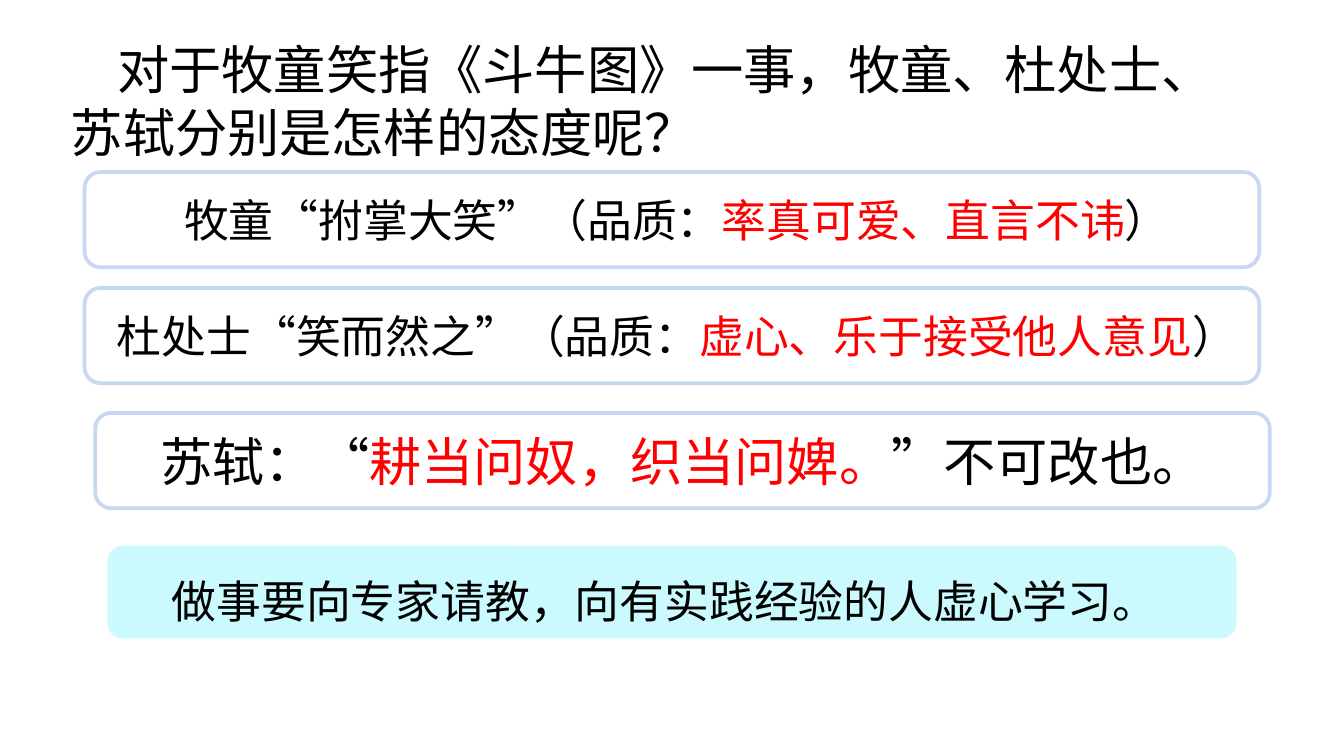
from pptx import Presentation
from pptx.dml.color import RGBColor
from pptx.enum.lang import MSO_LANGUAGE_ID
from pptx.enum.shapes import MSO_SHAPE
from pptx.enum.text import MSO_ANCHOR, PP_ALIGN
from pptx.oxml.ns import qn
from pptx.util import Cm, Pt
from lxml import etree

FONT = "Noto Sans CJK SC"
BLACK = RGBColor(0x00, 0x00, 0x00)
RED = RGBColor(0xFF, 0x00, 0x00)
WHITE = RGBColor(0xFF, 0xFF, 0xFF)
PALE_BLUE = RGBColor(0xC6, 0xD9, 0xF1)
CYAN = RGBColor(0xCA, 0xFA, 0xFE)

ROUNDED = MSO_SHAPE.ROUNDED_RECTANGLE
CALLOUT = MSO_SHAPE.ROUNDED_RECTANGULAR_CALLOUT
LEFT, CENTER = PP_ALIGN.LEFT, PP_ALIGN.CENTER
TOP, MIDDLE = MSO_ANCHOR.TOP, MSO_ANCHOR.MIDDLE
CHINESE = MSO_LANGUAGE_ID.SIMPLIFIED_CHINESE

# Attitude boxes: left, top, text size, left margin, (text, colour) pieces
ATTITUDES = [
    (1.6, 3.25, 24, 0.44, [("牧童“拊掌大笑”（品质：", BLACK),
                           ("率真可爱、直言不讳", RED), ("）", BLACK)]),
    (1.6, 5.44, 24, 0.44, [("杜处士“笑而然之”（品质：", BLACK),
                           ("虚心、乐于接受他人意见", RED), ("）", BLACK)]),
    (1.8, 7.8, 28, 0.25, [("苏轼：“", BLACK), ("耕当问奴，织当问婢。", RED),
                          ("”不可改也。", BLACK)]),
]


def write_text(shape, pieces, size, align=LEFT, anchor=TOP, indent=0,
               margin_left=0.25, line_spacing=1.0):
    """Write one paragraph made of (text, colour) pieces."""
    frame = shape.text_frame
    frame.word_wrap = True
    frame.vertical_anchor = anchor
    frame.margin_left = Cm(margin_left)
    paragraph = frame.paragraphs[0]
    paragraph.alignment = align
    paragraph.line_spacing = line_spacing
    paragraph._p.get_or_add_pPr().set("indent", str(Cm(indent)))
    for text, color in pieces:
        run = paragraph.add_run()
        run.text = text
        run.font.size = Pt(size)
        run.font.name = FONT
        run.font.color.rgb = color
        run.font.language_id = CHINESE
        # East Asian typeface follows the Latin one
        latin = run.font._element.find(qn("a:latin"))
        east_asian = etree.Element(qn("a:ea"), typeface=FONT)
        latin.addnext(east_asian)


def add_panel(slide, kind, left, top, width, height, fill, line=None):
    panel = slide.shapes.add_shape(kind, Cm(left), Cm(top), Cm(width), Cm(height))
    panel.shadow.inherit = False
    panel.fill.solid()
    panel.fill.fore_color.rgb = fill
    if line is None:
        panel.line.fill.background()
    else:
        panel.line.color.rgb = line
        panel.line.width = Pt(2)
    return panel


def main():
    deck = Presentation()
    deck.slide_width, deck.slide_height = Cm(25.4), Cm(14.28)
    slide = deck.slides.add_slide(deck.slide_layouts[6])

    # Question
    question = slide.shapes.add_textbox(Cm(1.09), Cm(0.58), Cm(22.6), Cm(2.64))
    write_text(question, [("对于牧童笑指《斗牛图》一事，牧童、杜处士、苏轼分别是怎样的态度呢？",
                           BLACK)], 28, indent=0.88)

    # Attitude of each person
    for left, top, size, margin, pieces in ATTITUDES:
        attitude = add_panel(slide, ROUNDED, left, top, 22.2, 1.8, WHITE, PALE_BLUE)
        write_text(attitude, pieces, size, CENTER, MIDDLE, margin_left=margin)

    # Lesson, with the callout tip tucked inside its body
    lesson = add_panel(slide, CALLOUT, 2.03, 10.31, 21.34, 1.75, CYAN)
    lesson.adjustments[0], lesson.adjustments[1] = 0.5, 0.3
    write_text(lesson, [("做事要向专家请教，向有实践经验的人虚心学习。", BLACK)], 24,
               anchor=MIDDLE, indent=0.88, line_spacing=1.3)

    deck.save("out.pptx")


if __name__ == "__main__":
    main()
